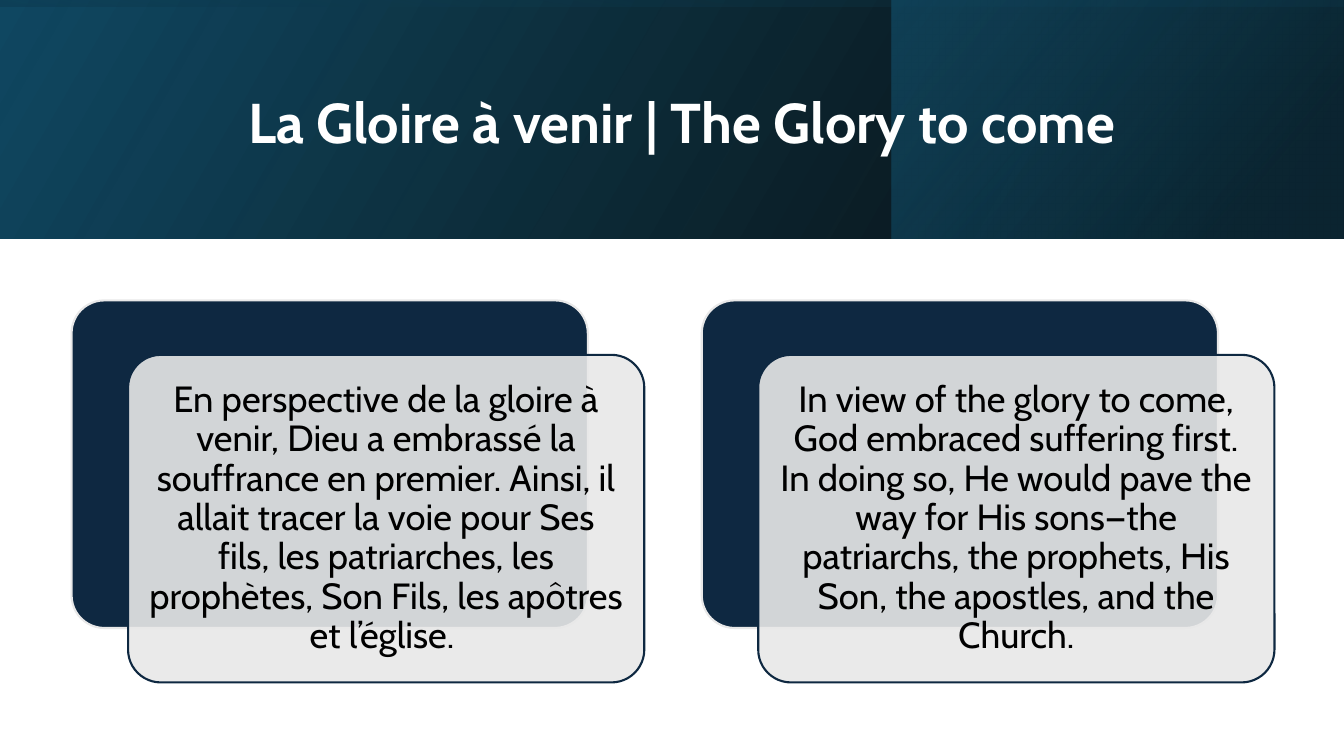
"""Build a bilingual slide with a gradient banner and two layered cards."""
from dataclasses import dataclass

from lxml.etree import SubElement as Sub
from pptx import Presentation
from pptx.dml.color import RGBColor
from pptx.enum.shapes import MSO_SHAPE as Kind
from pptx.enum.text import MSO_ANCHOR as Anchor, PP_ALIGN as Align
from pptx.oxml.ns import qn
from pptx.util import Inches, Pt

NAVY = RGBColor(0x0E, 0x28, 0x41)
PALE = RGBColor(0xE8, 0xE8, 0xE8)
WHITE = RGBColor(0xFF, 0xFF, 0xFF)
BLACK = RGBColor(0, 0, 0)
OCEAN = RGBColor(0x10, 0x48, 0x62)
DEEP = RGBColor(0x0B, 0x30, 0x41)
TEAL = RGBColor(0x15, 0x60, 0x82)
FONT = "Cabin"


@dataclass
class Box:
    left: float
    top: float
    width: float
    height: float

    def shift(self, dx: float, dy: float) -> "Box":
        return Box(self.left + dx, self.top + dy, self.width, self.height)

    def inset(self, gap: float) -> "Box":
        return Box(self.left + gap, self.top + gap,
                   self.width - 2 * gap, self.height - 2 * gap)

    def emu(self) -> list:
        return [Inches(n) for n in (self.left, self.top, self.width, self.height)]


@dataclass
class Stop:
    pos: int
    color: RGBColor
    alpha: int


@dataclass
class Band:
    box: Box
    stops: tuple
    angle: int
    turn: int = 0


@dataclass
class Card:
    left: float
    text: str


BANDS = (
    Band(Box(0, 0, 13.33, 2.37), (Stop(0, BLACK, 96), Stop(100, OCEAN, 100)), 330),
    Band(Box(8.84, 0, 4.48, 2.37), (Stop(19, DEEP, 68), Stop(100, TEAL, 48)), 320),
    Band(Box(5.48, -5.48, 2.37, 13.33),
         (Stop(23, OCEAN, 16), Stop(99, BLACK, 45)), 350, 270),
)
CARDS = (
    Card(0.71, "En perspective de la gloire à venir, Dieu a embrassé la souffrance "
               "en premier. Ainsi, il allait tracer la voie pour Ses fils, les "
               "patriarches, les prophètes, Son Fils, les apôtres et l’église. "),
    Card(6.96, "In view of the glory to come, God embraced suffering first. In doing "
               "so, He would pave the way for His sons—the patriarchs, the prophets, "
               "His Son, the apostles, and the Church."),
)


def add_alpha(color, alpha: int) -> None:
    Sub(color, qn("a:alpha")).set("val", str(alpha * 1000))


def add_band(slide, band: Band) -> None:
    shape = slide.shapes.add_shape(Kind.RECTANGLE, *band.box.emu())
    shape.shadow.inherit = False
    shape.line.fill.background()
    shape.rotation = band.turn
    shape._element.spPr.find(qn("a:xfrm")).set("flipH", "1")
    shape.fill.gradient()
    shape.fill.gradient_angle = 360 - band.angle
    grad = shape._element.spPr.find(qn("a:gradFill"))
    stops = grad.find(qn("a:gsLst"))
    for old in list(stops):
        stops.remove(old)
    for stop in band.stops:
        mark = Sub(stops, qn("a:gs"))
        mark.set("pos", str(stop.pos * 1000))
        color = Sub(mark, qn("a:srgbClr"))
        color.set("val", str(stop.color))
        add_alpha(color, stop.alpha)


def add_panel(slide, box: Box, fill: RGBColor, line: RGBColor, alpha: int = 100) -> None:
    shape = slide.shapes.add_shape(Kind.ROUNDED_RECTANGLE, *box.emu())
    shape.shadow.inherit = False
    shape.adjustments[0] = 0.1
    shape.fill.solid()
    shape.fill.fore_color.rgb = fill
    shape.line.color.rgb = line
    shape.line.width = Pt(1.5)
    if alpha < 100:
        add_alpha(shape._element.spPr.find(f"{qn('a:solidFill')}/{qn('a:srgbClr')}"), alpha)


def add_text(slide, box: Box, text: str, *, size: int, color: RGBColor = BLACK,
             bold: bool = False, pad: float = 0.11) -> None:
    frame = slide.shapes.add_textbox(*box.emu()).text_frame
    frame.word_wrap = True
    frame.vertical_anchor = Anchor.MIDDLE
    frame.margin_left = frame.margin_right = Inches(pad)
    frame.margin_top = frame.margin_bottom = Inches(pad)
    para = frame.paragraphs[0]
    para.alignment = Align.CENTER
    para.line_spacing = 0.9
    run = para.add_run()
    run.text = text
    run.font.name = FONT
    run.font.size = Pt(size)
    run.font.bold = bold
    run.font.color.rgb = color


def add_card(slide, card: Card) -> None:
    back = Box(card.left, 2.98, 5.12, 3.25)
    front = back.shift(0.56, 0.54)
    add_panel(slide, back, NAVY, PALE)
    add_panel(slide, front, PALE, NAVY, alpha=90)
    add_text(slide, front.inset(0.1), card.text, size=26)


def main() -> None:
    deck = Presentation()
    deck.slide_width, deck.slide_height = Inches(13.33), Inches(7.5)
    slide = deck.slides.add_slide(deck.slide_layouts[6])
    for band in BANDS:
        add_band(slide, band)
    add_text(slide, Box(1.51, 0.38, 10.63, 1.72),
             "La Gloire à venir | The Glory to come ",
             size=40, color=WHITE, bold=True, pad=0.1)
    for card in CARDS:
        add_card(slide, card)
    deck.save("out.pptx")


if __name__ == "__main__":
    main()
